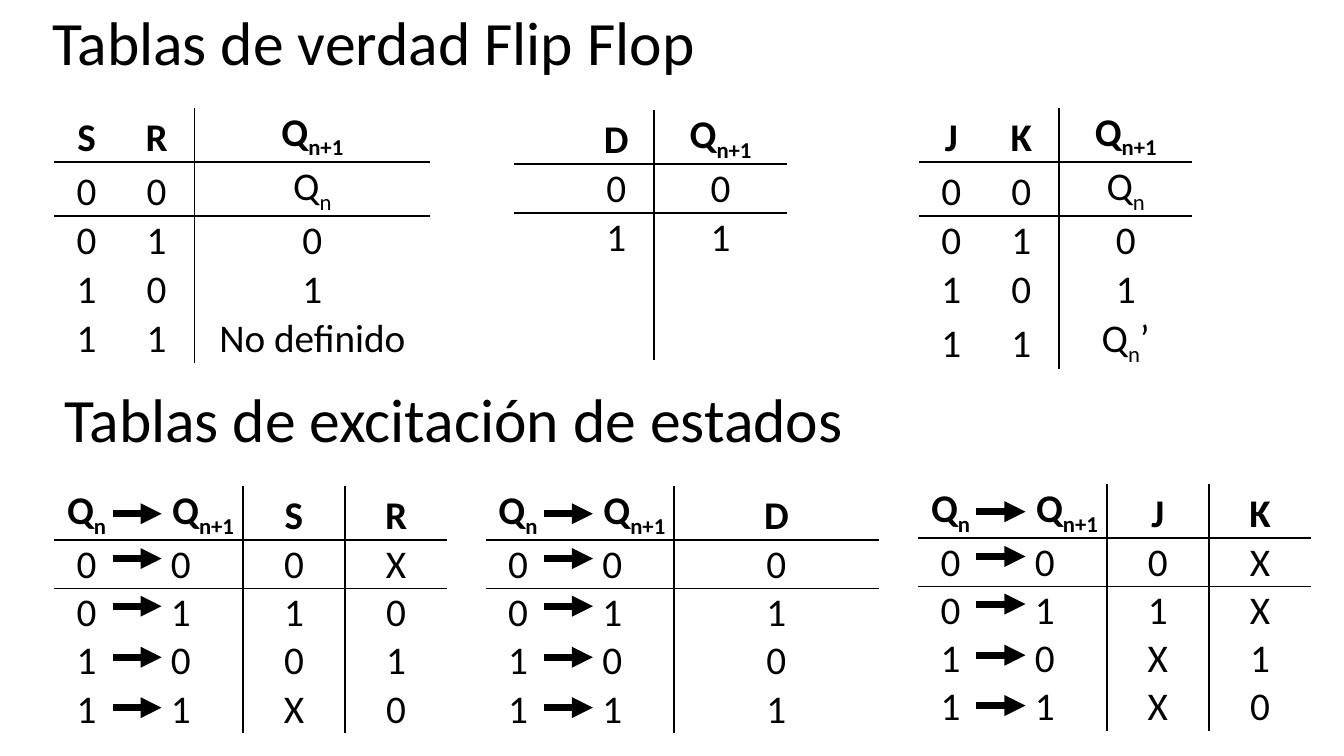
"""Build a slide of flip-flop truth tables and state excitation tables."""
from lxml import etree
from pptx import Presentation
from pptx.dml.color import RGBColor
from pptx.enum.shapes import MSO_CONNECTOR
from pptx.enum.text import MSO_ANCHOR, PP_ALIGN
from pptx.oxml.ns import qn
from pptx.util import Pt

BLACK = RGBColor(0, 0, 0)
FONT = "Calibri"
STRAIGHT = MSO_CONNECTOR.STRAIGHT
MIDDLE, BOTTOM = MSO_ANCHOR.MIDDLE, MSO_ANCHOR.BOTTOM
LEFT, CENTER = PP_ALIGN.LEFT, PP_ALIGN.CENTER
NO_STYLE = "{2D5ABB26-0587-4C30-8999-92F81FD0307C}"

TITLE = "Tablas de verdad Flip Flop"
SUBTITLE = "Tablas de excitación de estados"

# Underscores switch between normal text and subscript.
TRUTH_TABLES = [
    (656.6, 77, [46, 54, 95],
     ["J K Q_n+1", "0 0 Q_n", "0 1 0", "1 0 1", "1 1 Q_n_’"]),
    (367.2, 78.5, [46, 54, 95],
     ["|D|Q_n+1", "|0|0", "|1|1", "||", "||"]),
    (38.9, 77, [46, 54, 168.5],
     ["S|R|Q_n+1", "0|0|Q_n", "0|1|0", "1|0|1", "1|1|No definido"]),
]
EXCITATION_TABLES = [
    (38.9, 347, [46, 88.6, 73, 73],
     ["Q_n Q_n+1 S R", "0 0 0 X", "0 1 1 0", "1 0 0 1", "1 1 X 0"]),
    (347, 347, [46, 88.6, 146],
     ["Q_n Q_n+1 D", "0 0 0", "0 1 1", "1 0 0", "1 1 1"]),
    (656, 345.5, [46, 88.6, 73, 73],
     ["Q_n Q_n+1 J K", "0 0 0 X", "0 1 1 X", "1 0 X 1", "1 1 X 0"]),
]
ROW_HEIGHT = 34.4
HEADER_INDENT = 32.5
ARROW_LEFT, ARROW_LENGTH = 41.5, 35
ARROW_OFFSETS = [20, 52, 86, 122.5, 158.5]


def style_font(font, size, bold=False):
    font.name, font.size, font.bold = FONT, Pt(size), bold
    font.color.rgb = BLACK


def set_heading(box, text, left, top):
    box.left, box.top, box.width, box.height = Pt(left), Pt(top), Pt(828), Pt(104.4)
    frame = box.text_frame
    frame.text = text
    frame.word_wrap = True
    frame.vertical_anchor = MIDDLE
    para = frame.paragraphs[0]
    para.alignment = LEFT
    para.line_spacing = 0.9
    style_font(para.runs[0].font, 44)


def add_border(cell, side):
    line = etree.SubElement(cell._tc.get_or_add_tcPr(), qn(f"a:ln{side}"), w=str(Pt(1.5)))
    fill = etree.SubElement(line, qn("a:solidFill"))
    etree.SubElement(fill, qn("a:srgbClr"), val=str(BLACK))


def fill_cell(cell, text, row, column):
    sides = {"L": column == 2, "R": column == 1, "T": row == 1, "B": row == 0}
    for side, drawn in sides.items():
        if drawn:
            add_border(cell, side)
    cell.fill.background()
    cell.vertical_anchor = BOTTOM
    cell.margin_left = cell.margin_right = cell.margin_top = Pt(0.75)
    cell.margin_bottom = 0
    para = cell.text_frame.paragraphs[0]
    para.alignment = CENTER
    style_font(para.font, 28, row == 0)
    for index, part in enumerate(text.split("_") if text else []):
        span = para.add_run()
        span.text = part
        style_font(span.font, 28, row == 0)
        if index % 2:
            span.font._element.set("baseline", "-25000")


def add_state_table(page, left, top, widths, lines):
    rows = [line.split("|") if "|" in line else line.split() for line in lines]
    table = page.shapes.add_table(
        len(rows), len(widths), Pt(left), Pt(top),
        Pt(sum(widths)), Pt(ROW_HEIGHT * len(rows))).table
    table.first_row = table.horz_banding = False
    table._tbl.tblPr.find(qn("a:tableStyleId")).text = NO_STYLE
    for column, width in zip(table.columns, widths):
        column.width = Pt(width)
    for row, texts in enumerate(rows):
        for column, text in enumerate(texts):
            fill_cell(table.cell(row, column), text, row, column)
    return table


def add_arrow(page, left, top):
    arrow = page.shapes.add_connector(
        STRAIGHT, Pt(left), Pt(top), Pt(left + ARROW_LENGTH), Pt(top))
    arrow.line.width = Pt(5)
    arrow.line.color.rgb = BLACK
    etree.SubElement(arrow.line._get_or_add_ln(), qn("a:tailEnd"), type="triangle")
    etree.SubElement(arrow._element.spPr, qn("a:effectLst"))


def main():
    deck = Presentation()
    deck.slide_width, deck.slide_height = Pt(960), Pt(540)
    page = deck.slides.add_slide(deck.slide_layouts[5])
    set_heading(page.shapes.title, TITLE, 30.2, -19.4)
    for left, top, widths, lines in TRUTH_TABLES:
        add_state_table(page, left, top, widths, lines)
    set_heading(page.shapes.add_textbox(0, 0, 0, 0), SUBTITLE, 38.9, 249.8)
    for left, top, widths, lines in EXCITATION_TABLES:
        table = add_state_table(page, left, top, widths, lines)
        table.cell(0, 1).margin_left = Pt(HEADER_INDENT)
        for offset in ARROW_OFFSETS:
            add_arrow(page, left + ARROW_LEFT, top + offset)
    deck.save("out.pptx")


if __name__ == "__main__":
    main()
